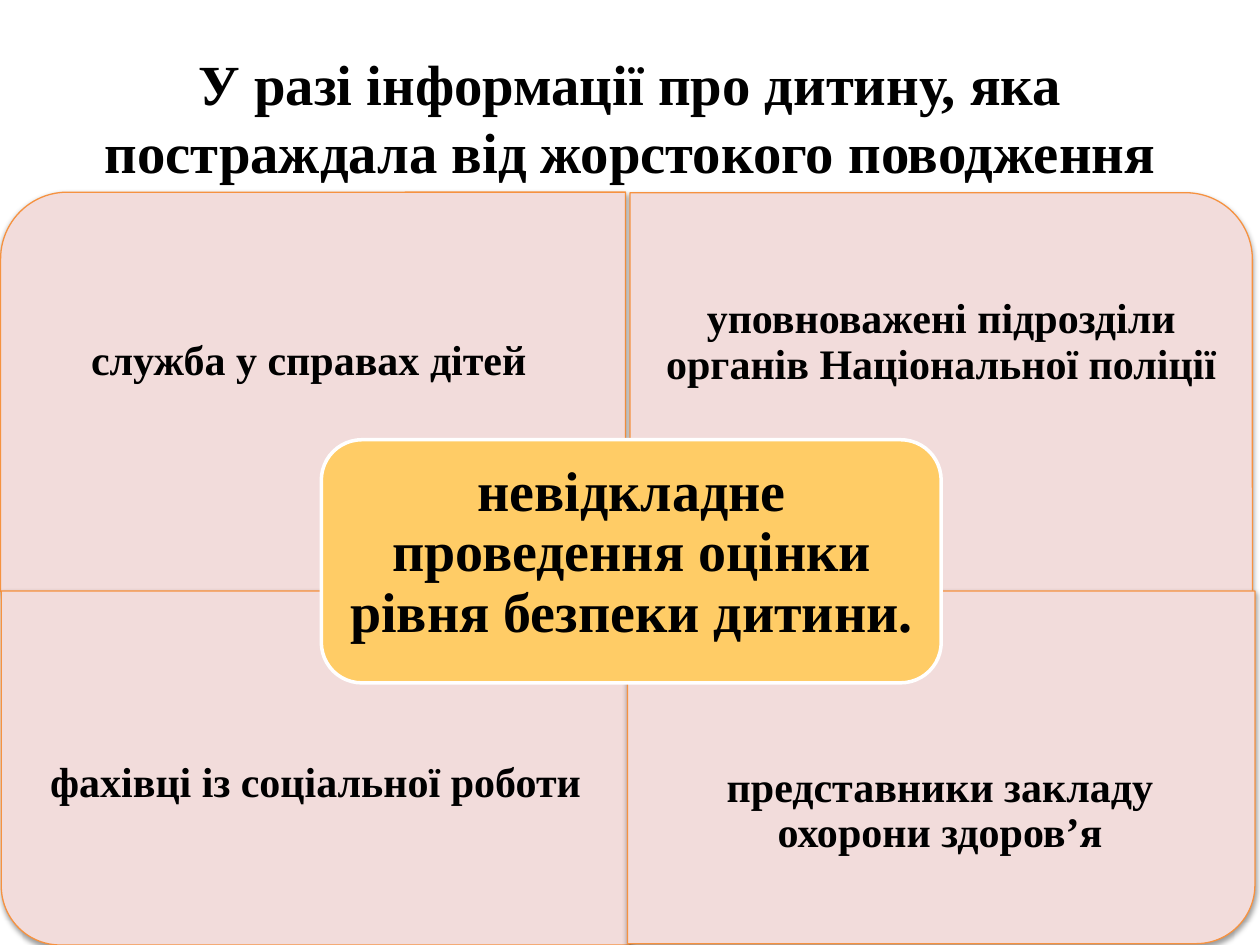
import pptx
import pptx.dml.color
import pptx.enum.shapes
import pptx.enum.text
import pptx.oxml
import pptx.oxml.ns
import pptx.util
from pptx.util import Inches

BLACK = pptx.dml.color.RGBColor(0x00, 0x00, 0x00)
WHITE = pptx.dml.color.RGBColor(0xFF, 0xFF, 0xFF)
PINK = pptx.dml.color.RGBColor(0xF2, 0xDC, 0xDB)
ORANGE = pptx.dml.color.RGBColor(0xF6, 0x92, 0x40)
YELLOW = pptx.dml.color.RGBColor(0xFF, 0xCC, 0x66)

SHADOW = (
    f'<a:effectLst {pptx.oxml.ns.nsdecls("a")}>'
    '<a:outerShdw blurRad="40000" dist="20000" dir="5400000" rotWithShape="0">'
    '<a:srgbClr val="000000"><a:alpha val="38000"/></a:srgbClr>'
    '</a:outerShdw></a:effectLst>'
)

TITLE = "У разі інформації про дитину, яка постраждала від жорстокого поводження"
CENTRE = "невідкладне проведення оцінки рівня безпеки дитини."
QUARTERS = [
    ((0.9, 0.63, 3.17, 4.96), 270, (-0.03, 1.59, 4.96, 2.57),
     "служба у справах дітей"),
    ((5, 1.53, 4.94, 3.17), 0, (5, 1.53, 4.94, 2.38),
     "уповноважені підрозділи органів Національної поліції"),
    ((0.01, 4.69, 4.99, 2.81), 180, (0.01, 4.94, 4.99, 2.56),
     "фахівці із соціальної роботи"),
    ((6.07, 3.6, 2.8, 4.98), 90, (4.97, 5.39, 4.98, 2.1),
     "представники закладу охорони здоров’я"),
]


class SlideBuilder:
    """Holds the text style and the current slide, and adds elements to it."""

    font = "Times New Roman"

    def __init__(self, deck):
        self.slide = deck.slides.add_slide(deck.slide_layouts[5])

    def set_text(self, frame, text, size, spacing):
        frame.word_wrap = True
        frame.auto_size = pptx.enum.text.MSO_AUTO_SIZE.NONE
        frame.vertical_anchor = pptx.enum.text.MSO_ANCHOR.MIDDLE
        frame.text = text
        para = frame.paragraphs[0]
        para.alignment = pptx.enum.text.PP_ALIGN.CENTER
        para.line_spacing = spacing
        span = para.runs[0]
        span.font.name = self.font
        span.font.size = pptx.util.Pt(size)
        span.font.bold = True
        span.font.color.rgb = BLACK

    def title(self, place, text, size):
        box = self.slide.shapes.title
        box.left, box.top, box.width, box.height = map(Inches, place)
        self.set_text(box.text_frame, text, size, 1.0)

    def label(self, place, text, size, inset):
        box = self.slide.shapes.add_textbox(*map(Inches, place))
        frame = box.text_frame
        frame.margin_left = frame.margin_right = Inches(inset)
        frame.margin_top = frame.margin_bottom = Inches(inset)
        self.set_text(frame, text, size, 0.9)

    def panel(self, kind, place, fill, line, weight, rotation=0):
        shape = self.slide.shapes.add_shape(kind, *map(Inches, place))
        shape.rotation = rotation
        shape.shadow.inherit = False
        shape.fill.solid()
        shape.fill.fore_color.rgb = fill
        shape.line.color.rgb = line
        shape.line.width = pptx.util.Pt(weight)
        return shape

    def quarter(self, place, rotation, text_place, text):
        kind = pptx.enum.shapes.MSO_SHAPE.ROUND_1_RECTANGLE
        shape = self.panel(kind, place, PINK, ORANGE, 0.75, rotation)
        properties = shape.element.spPr
        effects = properties.find(pptx.oxml.ns.qn("a:effectLst"))
        properties.replace(effects, pptx.oxml.parse_xml(SHADOW))
        self.label(text_place, text, 24, 0.18)


def main():
    deck = pptx.Presentation()
    deck.slide_width = Inches(10)
    deck.slide_height = Inches(7.5)
    builder = SlideBuilder(deck)
    builder.title((0.5, 0.3, 9, 1.25), TITLE, 32.4)
    for quarter in QUARTERS:
        builder.quarter(*quarter)
    kind = pptx.enum.shapes.MSO_SHAPE.ROUNDED_RECTANGLE
    builder.panel(kind, (2.55, 3.49, 4.92, 1.93), YELLOW, WHITE, 2)
    builder.label((2.63, 3.56, 4.77, 1.67), CENTRE, 32, 0.13)
    deck.save("out.pptx")


if __name__ == "__main__":
    main()
